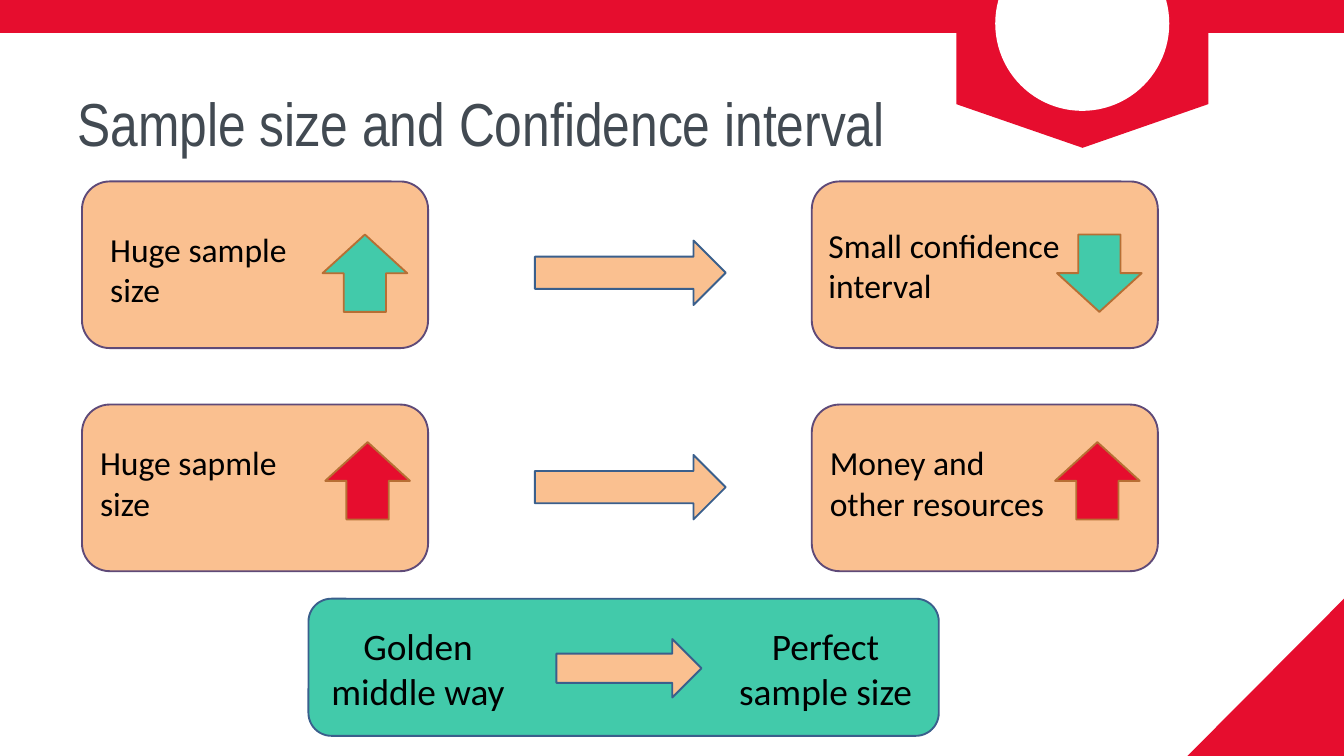
from pptx import Presentation
from pptx.dml.color import RGBColor
from pptx.enum.shapes import MSO_SHAPE as SHAPE
from pptx.enum.text import MSO_AUTO_SIZE as FIT, PP_ALIGN as ALIGN
from pptx.util import Inches, Pt

W, H = 20, 11.25
THEME = {
    "red": "E60D2E", "green": "42CAAA", "peach": "FAC090", "white": "FFFFFF",
    "ink": "000000", "slate": "424A52",
    "card_line": "5F4A78", "flow_line": "3A5F8C", "trend_line": "B76F34",
    "line_width": 2,
    "title": {"name": "Arial Narrow", "size": Pt(65)},
    "label": {"name": "Calibri", "size": Pt(36)},
    "result": {"name": "Calibri", "size": Pt(40)},
}

TITLE = "Sample size and Confidence interval"
COLUMNS, ROWS = (1.22, 12.08), (2.7, 6.02)
CARD, TREND, FLOW = (5.15, 2.48), (1.26, 1.15), (2.84, 0.96)
FLOW_X, FLOW_DY = 7.96, (0.88, 0.75)

CARDS = [
    {"cell": (0, 0), "text": "Huge sample size", "box": (0.32, 0.65, 3.05, 1.3),
     "trend": (3.58, 0.79), "up": True, "fill": "green"},
    {"cell": (1, 0), "text": "Small confidence interval", "box": (0.15, 0.59, 3.92, 1.31),
     "trend": (3.65, 0.79), "up": False, "fill": "green"},
    {"cell": (0, 1), "text": "Huge sapmle size", "box": (0.17, 0.51, 3.44, 1.31),
     "trend": (3.62, 0.56), "up": True, "fill": "red"},
    {"cell": (1, 1), "text": "Money and other resources", "box": (0.17, 0.51, 3.44, 1.31),
     "trend": (3.62, 0.56), "up": True, "fill": "red"},
]
RESULT = (4.59, 8.91, 9.38, 2.04)
RESULT_FLOW = (8.28, 9.51, 2.16, 0.87)
RESULT_TEXTS = [("Golden middle way", 4.53, 3.38), ("Perfect sample size", 10.81, 2.95)]

BAND = [(0, 0), (W, 0), (W, 0.49), (0, 0.49)]
CORNER = [(W, 8.91), (W, H), (17.67, H)]
BADGE = [(14.23, 0), (17.98, 0), (17.98, 1.55), (16.11, 2.2), (14.23, 1.55)]
DISC = (14.81, -0.95, 2.59, 2.6)


def color(name):
    return RGBColor.from_string(THEME[name])


def paint(sp, fill, line=None):
    sp.shadow.inherit = False
    sp.fill.solid()
    sp.fill.fore_color.rgb = color(fill)
    if line:
        sp.line.color.rgb = color(line)
        sp.line.width = Pt(THEME["line_width"])
    else:
        sp.line.fill.background()
    return sp


def shape(s, kind, at, fill, line=None):
    return paint(s.shapes.add_shape(kind, *map(Inches, at)), fill, line)


def polygon(s, points, fill):
    (x, y), *rest = [(Inches(x), Inches(y)) for x, y in points]
    builder = s.shapes.build_freeform(x, y)
    builder.add_line_segments(rest, close=True)
    return paint(builder.convert_to_shape(), fill)


def text(s, content, at, style, ink="ink", align=ALIGN.LEFT, spacing=None, inset=True):
    tf = s.shapes.add_textbox(*map(Inches, at)).text_frame
    tf.word_wrap, tf.auto_size = True, FIT.SHAPE_TO_FIT_TEXT
    if not inset:
        for side in ("left", "top", "right", "bottom"):
            setattr(tf, f"margin_{side}", 0)
    p = tf.paragraphs[0]
    p.alignment, p.line_spacing = align, spacing
    r = p.add_run()
    r.text = content
    for key, value in THEME[style].items():
        setattr(r.font, key, value)
    r.font.color.rgb = color(ink)


def card(s, item):
    col, row = item["cell"]
    x, y = COLUMNS[col], ROWS[row]
    shape(s, SHAPE.ROUNDED_RECTANGLE, (x, y, *CARD), "peach", "card_line")
    dx, dy = item["trend"]
    trend = shape(s, SHAPE.DOWN_ARROW, (x + dx, y + dy, *TREND), item["fill"], "trend_line")
    trend.rotation = 180 if item["up"] else 0
    dx, dy, width, height = item["box"]
    text(s, item["text"], (x + dx, y + dy, width, height), "label")


def main():
    prs = Presentation()
    prs.slide_width, prs.slide_height = Inches(W), Inches(H)
    s = prs.slides.add_slide(prs.slide_layouts[6])

    polygon(s, BAND, "red")
    text(s, TITLE, (0.32, 1.1, 13.69, 1.28), "title", "slate", ALIGN.CENTER, Pt(91), False)
    polygon(s, CORNER, "red")
    polygon(s, BADGE, "red")
    shape(s, SHAPE.OVAL, DISC, "white")

    for item in CARDS:
        card(s, item)
    for y, dy in zip(ROWS, FLOW_DY):
        shape(s, SHAPE.RIGHT_ARROW, (FLOW_X, y + dy, *FLOW), "peach", "flow_line")

    shape(s, SHAPE.ROUNDED_RECTANGLE, RESULT, "green", "flow_line")
    for content, x, width in RESULT_TEXTS:
        text(s, content, (x, 9.22, width, 1.45), "result", align=ALIGN.CENTER)
    shape(s, SHAPE.RIGHT_ARROW, RESULT_FLOW, "peach", "flow_line")

    prs.save("out.pptx")


if __name__ == "__main__":
    main()
